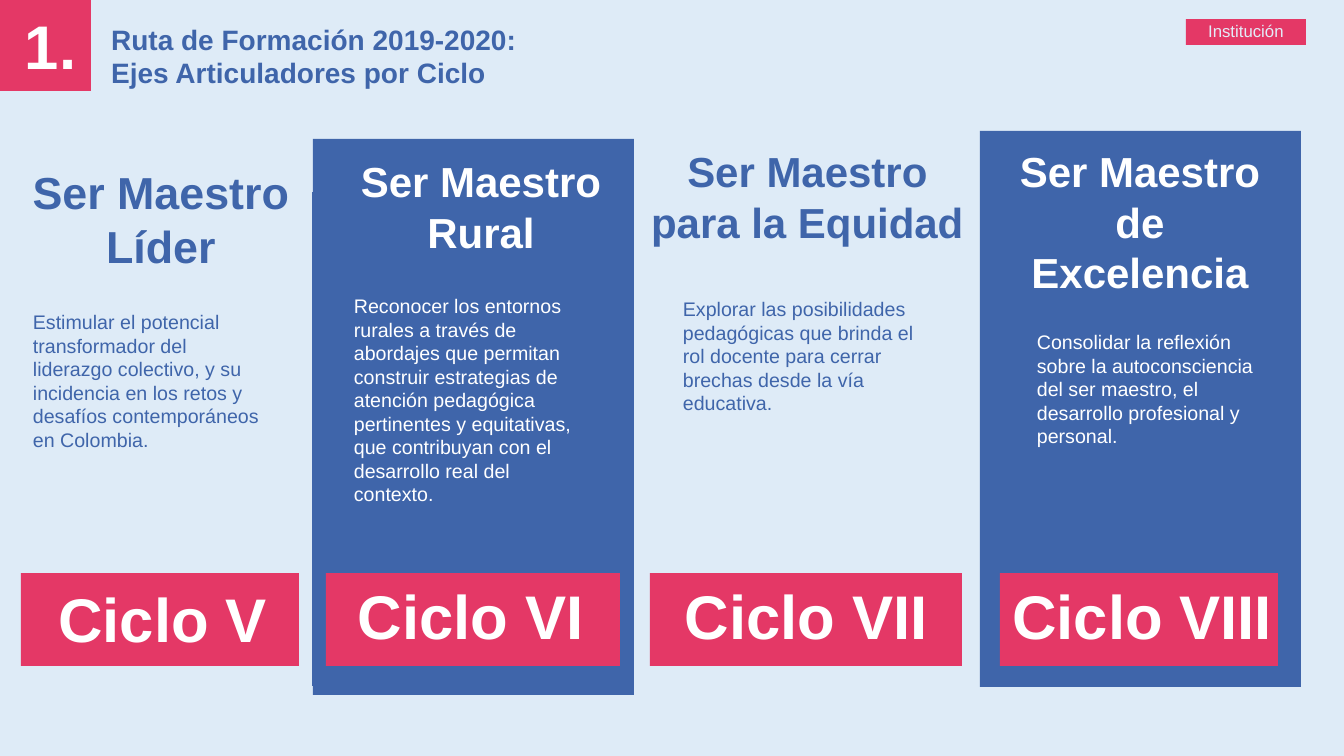
from lxml.etree import SubElement
from pptx import Presentation
from pptx.dml.color import RGBColor
from pptx.enum.shapes import MSO_CONNECTOR, MSO_SHAPE
from pptx.enum.text import MSO_ANCHOR, PP_ALIGN
from pptx.oxml.ns import qn
from pptx.util import Emu, Pt

PIXEL = 12192000 / 1344
BLUE, PINK, WHITE = "3F65AA", "E43866", "FFFFFF"
BAR_TOP, BAR_HEIGHT = 573, 93
PANEL_WIDTH, PANEL_HEIGHT = 321, 556
BODY_WIDTH = 252

presentation = Presentation()
presentation.slide_width = Emu(round(1344 * PIXEL))
presentation.slide_height = Emu(round(756 * PIXEL))
slide = presentation.slides.add_slide(presentation.slide_layouts[5])
slide.background.fill.solid()
slide.background.fill.fore_color.rgb = RGBColor.from_string("DEEBF7")


def add_block(left, top, width, height, color):
    box = [Emu(round(length * PIXEL)) for length in (left, top, width, height)]
    shape = slide.shapes.add_shape(MSO_SHAPE.RECTANGLE, *box)
    shape.shadow.inherit = False
    shape.fill.solid()
    shape.fill.fore_color.rgb = RGBColor.from_string(color)
    shape.line.fill.background()


def write(text, left, top, width, height, size, color, bold=False,
          alignment=PP_ALIGN.LEFT, shape=None):
    """Fill the given shape, or a new text box, with formatted text."""
    box = [Emu(round(length * PIXEL)) for length in (left, top, width, height)]
    shape = shape or slide.shapes.add_textbox(*box)
    shape.left, shape.top, shape.width, shape.height = box
    text_frame = shape.text_frame
    text_frame.text = text
    text_frame.word_wrap = True
    text_frame.vertical_anchor = MSO_ANCHOR.TOP
    for paragraph in text_frame.paragraphs:
        paragraph.alignment = alignment
        for run in paragraph.runs:
            run.font.name = "Arial"
            run.font.size = Pt(size)
            run.font.bold = bold
            run.font.color.rgb = RGBColor.from_string(color)


# Header
add_block(0, 0, 91, 91, PINK)
write("1.", 15, 3, 77, 85, 44, WHITE, bold=True)
write("Ruta de Formación 2019-2020:\nEjes Articuladores por Ciclo",
      101, 17, 612, 78, 20, BLUE, bold=True, shape=slide.shapes.title)
add_block(1186, 19, 120, 26, PINK)
write("Institución", 1181, 16, 130, 30, 12, "E3ECF8", alignment=PP_ALIGN.CENTER)

# Panels behind the second and fourth cycles
for left, top in ((313, 139), (980, 131)):
    add_block(left, top, PANEL_WIDTH, PANEL_HEIGHT, BLUE)

# Edges of the second cycle's panel
for x, top, bottom in ((313, 192, 686), (633, 195, 688)):
    ends = [Emu(round(length * PIXEL)) for length in (x, top, x, bottom)]
    edge = slide.shapes.add_connector(MSO_CONNECTOR.STRAIGHT, *ends)
    edge.line.color.rgb = RGBColor.from_string(BLUE)
    edge.line.width = Pt(0.75)
    SubElement(edge._element.spPr, qn("a:effectLst"))

# Each cycle: text color, heading with left, top, width, height and size,
# description with left, top and height, label, bar left and width,
# label left, top and width
cycles = [
    (BLUE, "Ser Maestro Líder", (-25, 160, 372, 119, 32),
     "Estimular el potencial transformador del liderazgo colectivo, y su "
     "incidencia en los retos y desafíos contemporáneos en Colombia.",
     (23, 305, 152), "Ciclo V", (21, 278), (31, 576, 264)),
    (WHITE, "Ser Maestro Rural", (343, 151, 276, 112, 30),
     "Reconocer los entornos rurales a través de abordajes que permitan "
     "construir estrategias de atención pedagógica pertinentes y equitativas, "
     "que contribuyan con el desarrollo real del contexto.",
     (344, 289, 224), "Ciclo VI", (326, 294), (326, 573, 290)),
    (BLUE, "Ser Maestro para la Equidad", (634, 141, 347, 112, 30),
     "Explorar las posibilidades pedagógicas que brinda el rol docente para "
     "cerrar brechas desde la vía educativa.",
     (673, 292, 129), "Ciclo VII", (650, 312), (651, 573, 311)),
    (WHITE, "Ser Maestro de Excelencia", (1002, 141, 276, 163, 30),
     "Consolidar la reflexión sobre la autoconsciencia del ser maestro, el "
     "desarrollo profesional y personal.",
     (1027, 325, 129), "Ciclo VIII", (1000, 278), (995, 573, 295)),
]
for (color, heading, heading_box, description, description_box,
     label, bar, label_box) in cycles:
    write(heading, *heading_box, color, bold=True, alignment=PP_ALIGN.CENTER)
    left, top, height = description_box
    write(description, left, top, BODY_WIDTH, height, 14, color)
    bar_left, bar_width = bar
    add_block(bar_left, BAR_TOP, bar_width, BAR_HEIGHT, PINK)
    write(label, *label_box, 85, 44, WHITE, bold=True, alignment=PP_ALIGN.CENTER)

presentation.save("out.pptx")
